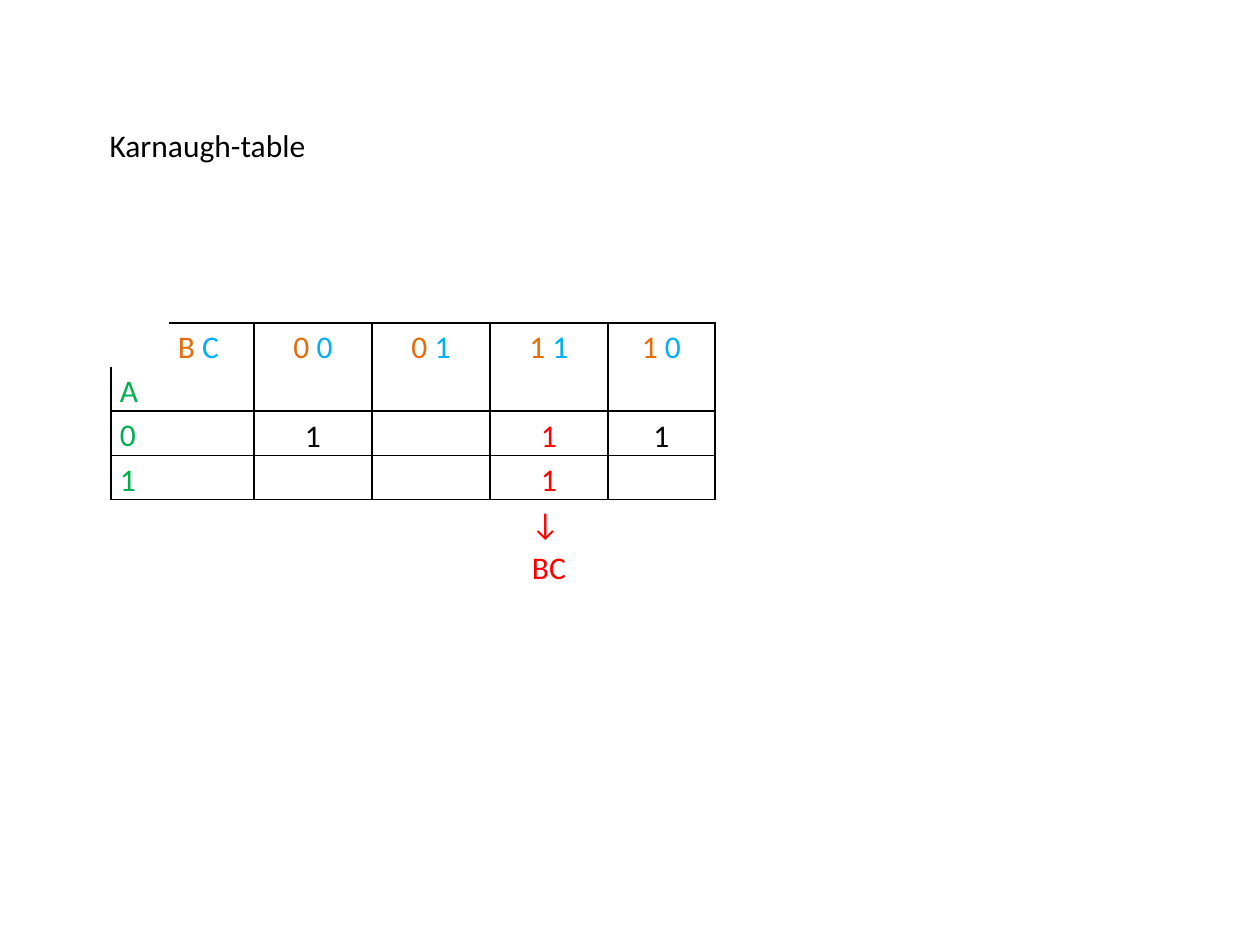
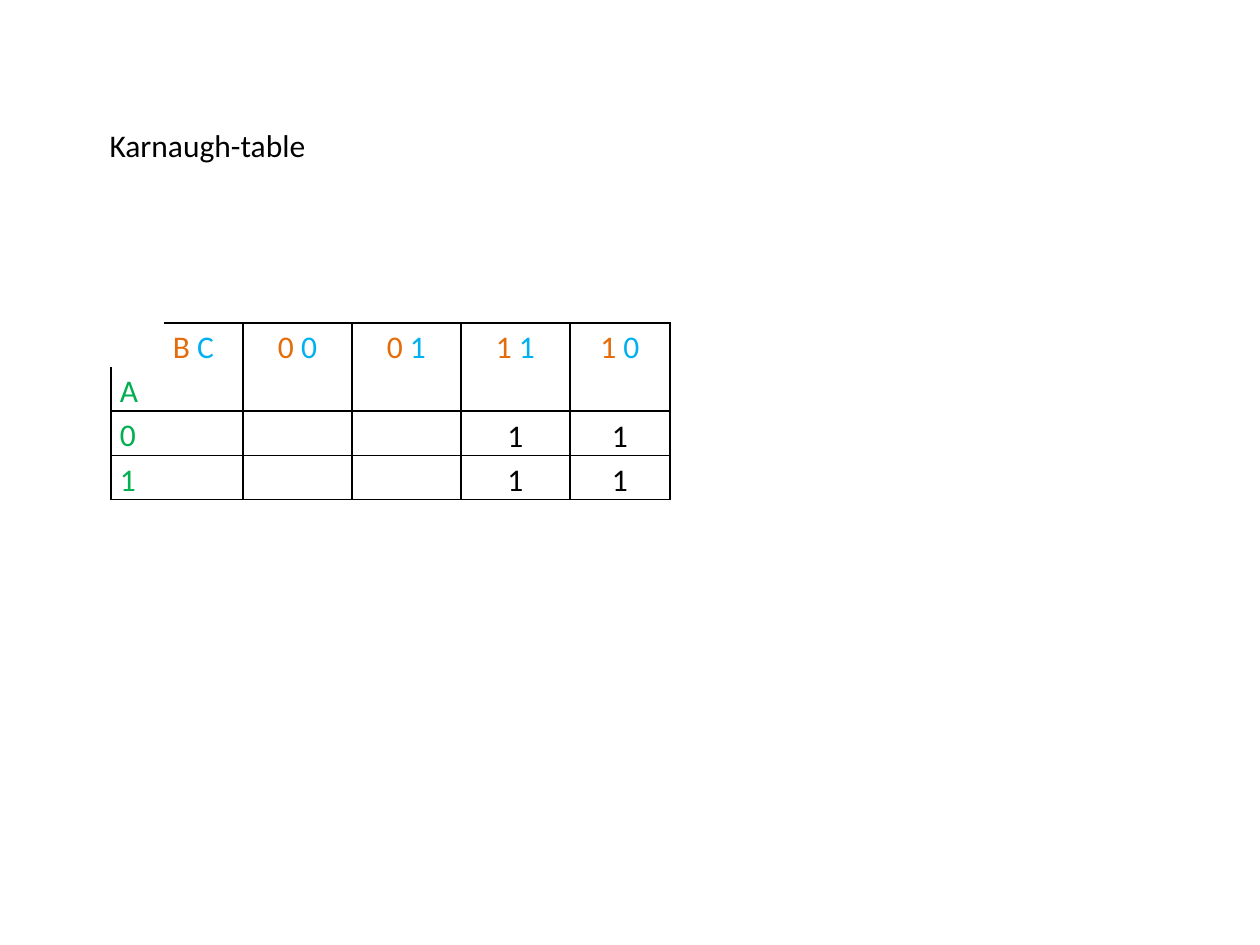
from itertools import product

from lxml.etree import SubElement
from pptx import Presentation
from pptx.dml.color import RGBColor
from pptx.enum.text import MSO_ANCHOR, MSO_AUTO_SIZE, PP_ALIGN
from pptx.oxml.ns import qn
from pptx.util import Emu, Pt

EMU_PER_PX = 7257
SLIDE_SIZE = (1260, 945)
TITLE_BOX = (97, 120, 692, 90)
TABLE_ORIGIN = (111, 323)
ROW_HEIGHTS = (44, 43, 44, 43, 87)
CELL_INSET = 9

BLACK = RGBColor(0x00, 0x00, 0x00)
RED = RGBColor(0xFF, 0x00, 0x00)
GREEN = RGBColor(0x00, 0xB0, 0x50)
ORANGE = RGBColor(0xE4, 0x6C, 0x0A)
BLUE = RGBColor(0x00, 0xB0, 0xF0)

FONT = "Calibri"
TEXT_SIZE = Pt(18)
BORDER_WIDTH = Pt(1)
PLAIN_TABLE_STYLE = "{2D5ABB26-0587-4C30-8999-92F81FD0307C}"

GRID_ROWS, GRID_COLUMNS = 4, 6
GRAY_CODE = ("00", "01", "11", "10")
OPEN_BORDERS = {(0, 0): "", (1, 0): "LB", (0, 1): "RTB", (1, 1): "RB"}


def px(length):
    return Emu(length * EMU_PER_PX)


def write_text(paragraph, text, color=BLACK, tail="", tail_color=BLACK,
               alignment=PP_ALIGN.LEFT, line_spacing=1.15):
    paragraph.alignment = alignment
    paragraph.line_spacing = line_spacing
    for part, part_color in ((text, color), (tail, tail_color)):
        if part:
            run = paragraph.add_run()
            run.text = part
            run.font.name = FONT
            run.font.size = TEXT_SIZE
            run.font.color.rgb = part_color


def add_title(slide, box, text):
    title = slide.shapes.title
    title.left, title.top, title.width, title.height = map(px, box)
    frame = title.text_frame
    frame.word_wrap = True
    frame.auto_size = MSO_AUTO_SIZE.NONE
    frame.vertical_anchor = MSO_ANCHOR.TOP
    write_text(frame.paragraphs[0], text, line_spacing=1.0)


def border_sides(row, column):
    if row >= GRID_ROWS or column >= GRID_COLUMNS:
        return ""
    return OPEN_BORDERS.get((row, column), "LRTB")


def format_cell(cell, sides):
    cell.margin_left = cell.margin_right = px(CELL_INSET)
    cell.margin_top = cell.margin_bottom = 0
    properties = cell._tc.get_or_add_tcPr()
    for side in sides:
        line = SubElement(properties, qn(f"a:ln{side}"), w=str(BORDER_WIDTH))
        fill = SubElement(line, qn("a:solidFill"))
        SubElement(fill, qn("a:srgbClr"), val=str(BLACK))
    cell.fill.background()


def add_plain_table(slide, origin, column_widths):
    box = (*origin, sum(column_widths), sum(ROW_HEIGHTS))
    frame = slide.shapes.add_table(len(ROW_HEIGHTS), len(column_widths), *map(px, box))
    table = frame.table
    table.first_row = table.horz_banding = False
    table._tbl.tblPr.find(qn("a:tableStyleId")).text = PLAIN_TABLE_STYLE
    for column, width in zip(table.columns, column_widths):
        column.width = px(width)
    for row, height in zip(table.rows, ROW_HEIGHTS):
        row.height = px(height)
    for row, column in product(range(len(ROW_HEIGHTS)), range(len(column_widths))):
        format_cell(table.cell(row, column), border_sides(row, column))
    return table


def add_karnaugh_map(slide, origin, column_widths, ones, result=None):
    table = add_plain_table(slide, origin, column_widths)
    for column in range(1, GRID_COLUMNS):
        table.cell(0, column).merge(table.cell(1, column))
    for row in range(2, len(ROW_HEIGHTS)):
        table.cell(row, 0).merge(table.cell(row, 1))

    def first_paragraph(row, column):
        return table.cell(row, column).text_frame.paragraphs[0]

    for column, (first, second) in enumerate(("BC", *GRAY_CODE), start=1):
        alignment = PP_ALIGN.LEFT if column == 1 else PP_ALIGN.CENTER
        write_text(first_paragraph(0, column), f"{first} ", color=ORANGE,
                   tail=second, tail_color=BLUE, alignment=alignment)
    for row, label in enumerate("A01", start=1):
        write_text(first_paragraph(row, 0), label, color=GREEN)
    for (a, bc), color in ones.items():
        row, column = 2 + a, 2 + GRAY_CODE.index(bc)
        table.cell(row, column).vertical_anchor = MSO_ANCHOR.MIDDLE
        write_text(first_paragraph(row, column), "1", color=color, alignment=PP_ALIGN.CENTER)
    if result:
        bc, term = result
        cell = table.cell(GRID_ROWS, 2 + GRAY_CODE.index(bc))
        cell.vertical_anchor = MSO_ANCHOR.MIDDLE
        frame = cell.text_frame
        write_text(frame.paragraphs[0], "↓ ", color=RED, alignment=PP_ALIGN.CENTER)
        write_text(frame.add_paragraph(), term, color=RED, alignment=PP_ALIGN.CENTER)


def add_karnaugh_slide(presentation, **map_options):
    slide = presentation.slides.add_slide(presentation.slide_layouts[5])
    add_title(slide, TITLE_BOX, "Karnaugh-table")
    add_karnaugh_map(slide, TABLE_ORIGIN, **map_options)


def main():
    presentation = Presentation()
    presentation.slide_width, presentation.slide_height = map(px, SLIDE_SIZE)
    add_karnaugh_slide(
        presentation,
        column_widths=(58, 85, 118, 118, 118, 107, 113),
        ones={(0, "00"): BLACK, (0, "11"): RED, (0, "10"): BLACK, (1, "11"): RED},
        result=("11", "BC"),
    )
    add_karnaugh_slide(
        presentation,
        column_widths=(53, 79, 109, 109, 109, 100, 104),
        ones={(a, bc): BLACK for a, bc in product((0, 1), ("11", "10"))},
    )
    presentation.save("out.pptx")


if __name__ == "__main__":
    main()
